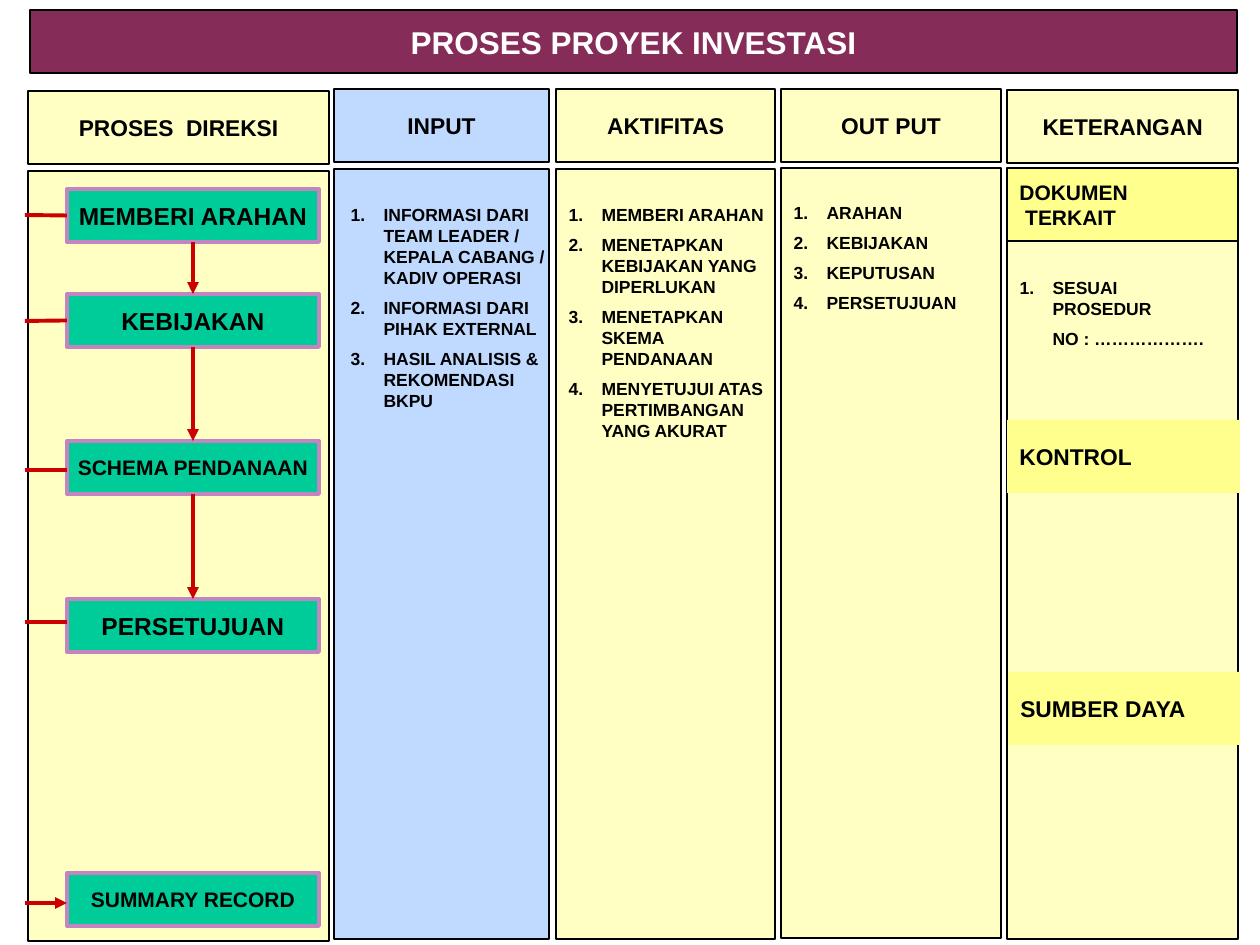
from dataclasses import dataclass
from lxml import etree
from pptx import Presentation, util as u
from pptx.dml.color import RGBColor
from pptx.enum import shapes, text
from pptx.oxml.ns import qn


@dataclass(frozen=True)
class Theme:
    font: str = "Arial"
    ink: str = "000000"
    white: str = "FFFFFF"
    title_fill: str = "862C59"
    cream: str = "FFFFC3"
    blue: str = "BFD9FF"
    yellow: str = "FFFF8D"
    step_fill: str = "00CC99"
    step_line: str = "C484BF"
    arrow: str = "CC0000"
    title_size: int = 18
    head_size: int = 13
    list_size: int = 10
    thin: float = 0.75
    thick: float = 2.25


THEME = Theme()

# Content (lengths in px, 126 px to the inch)
TITLE = "PROSES PROYEK INVESTASI"
# heading, left, width, heading top, body top, fill
COLUMNS = [
    ("PROSES  DIREKSI", 28, 301, 91, 171, THEME.cream),
    ("INPUT", 334, 215, 89, 169, THEME.blue),
    ("AKTIFITAS", 556, 219, 89, 169, THEME.cream),
    ("OUT PUT", 781, 220, 89, 168, THEME.cream),
    ("KETERANGAN", 1007, 231, 90, 169, THEME.cream),
]
# left, top, height, numbered items, unnumbered closing lines
LISTS = [
    (338, 198, 223, ["INFORMASI DARI TEAM LEADER / KEPALA CABANG / KADIV OPERASI",
                     "INFORMASI DARI PIHAK EXTERNAL",
                     "HASIL ANALISIS & REKOMENDASI BKPU"], []),
    (556, 198, 296, ["MEMBERI ARAHAN",
                     "MENETAPKAN KEBIJAKAN YANG DIPERLUKAN",
                     "MENETAPKAN SKEMA PENDANAAN",
                     "MENYETUJUI ATAS PERTIMBANGAN YANG AKURAT"], []),
    (781, 196, 129, ["ARAHAN", "KEBIJAKAN", "KEPUTUSAN", "PERSETUJUAN"], []),
    (1007, 271, 86, ["SESUAI PROSEDUR"], ["NO : ………………."]),
]
# label, top, text size, height of the incoming line
STEPS = [
    ("MEMBERI ARAHAN", 189, 14, 215),
    ("KEBIJAKAN", 294, 14, 321),
    ("SCHEMA PENDANAAN", 441, 12, 470),
    ("PERSETUJUAN", 599, 14, 622),
    ("SUMMARY RECORD", 873, 12, 903),
]
# lines, left, top, width, text size, outline
BANDS = [
    (["DOKUMEN", " TERKAIT"], 1007, 168, 231, 12, THEME.ink),
    (["KONTROL"], 1007, 420, 233, THEME.head_size, None),
    (["SUMBER DAYA"], 1008, 672, 232, THEME.head_size, None),
]
HEAD_HEIGHT, BODY_HEIGHT, STEP_HEIGHT = 73, 770, 53
STEP_LEFT, STEP_WIDTH, LINE_LEFT = 67, 252, 25
LIST_WIDTH, LIST_INDENT = 221, 33


def px(length):
    return u.Emu(round(length * 914400 / 126))


def place(shape, left, top, width, height):
    shape.left, shape.top, shape.width, shape.height = map(px, (left, top, width, height))


def paint(shape, fill, line=None, weight=THEME.thin):
    shape.fill.solid()
    shape.fill.fore_color.rgb = RGBColor.from_string(fill)
    if line:
        shape.line.color.rgb = RGBColor.from_string(line)
        shape.line.width = u.Pt(weight)
    else:
        shape.line.fill.background()


def write(shape, lines, size=THEME.head_size, color=THEME.ink, wrap=False,
          align=text.PP_ALIGN.CENTER, anchor=text.MSO_ANCHOR.MIDDLE, gap=0):
    frame = shape.text_frame
    frame.text = "\n".join(lines)
    frame.auto_size = text.MSO_AUTO_SIZE.NONE
    frame.word_wrap = wrap
    frame.vertical_anchor = anchor
    for number, paragraph in enumerate(frame.paragraphs):
        paragraph.alignment = align
        paragraph.space_before = u.Pt(gap if number else 0)
        font = paragraph.runs[0].font
        font.name, font.size, font.bold = THEME.font, u.Pt(size), True
        font.color.rgb = RGBColor.from_string(color)


def set_bullet(paragraph, numbered):
    properties = paragraph._p.get_or_add_pPr()
    properties.set("marL", str(px(LIST_INDENT)))
    properties.set("indent", str(px(-LIST_INDENT if numbered else 0)))
    if numbered:
        etree.SubElement(properties, qn("a:buAutoNum"), type="arabicPeriod")
    else:
        etree.SubElement(properties, qn("a:buNone"))


def add_box(slide, left, top, width, height, fill, line=None, weight=THEME.thin):
    box = slide.shapes.add_shape(shapes.MSO_SHAPE.RECTANGLE, 0, 0, 0, 0)
    place(box, left, top, width, height)
    box.shadow.inherit = False
    paint(box, fill, line, weight)
    return box


def add_line(slide, start, end, arrow=False):
    line = slide.shapes.add_connector(shapes.MSO_CONNECTOR.STRAIGHT, *map(px, start + end))
    line.line.color.rgb = RGBColor.from_string(THEME.arrow)
    line.line.width = u.Pt(THEME.thick)
    if arrow:
        etree.SubElement(line.line._get_or_add_ln(), qn("a:tailEnd"), type="triangle")
    etree.SubElement(line._element.spPr, qn("a:effectLst"))
    return line


def main():
    presentation = Presentation()
    presentation.slide_width, presentation.slide_height = px(1260), px(945)
    slide = presentation.slides.add_slide(presentation.slide_layouts.get_by_name("Comparison"))
    title, *bodies = slide.placeholders

    # Title bar
    place(title, 30, 10, 1207, 63)
    paint(title, THEME.title_fill, THEME.ink)
    write(title, [TITLE], size=THEME.title_size, color=THEME.white)

    # Columns with their headings
    for heading, left, width, head_top, body_top, fill in COLUMNS:
        add_box(slide, left, body_top, width, BODY_HEIGHT, fill, THEME.ink)
        write(add_box(slide, left, head_top, width, HEAD_HEIGHT, fill, THEME.ink), [heading])

    # Numbered lists, brought in front of the columns
    for body, (left, top, height, items, closing) in zip(bodies, LISTS):
        slide.shapes._spTree.append(body._element)
        place(body, left, top, LIST_WIDTH, height)
        write(body, items + closing, size=THEME.list_size, wrap=True, gap=5,
              align=text.PP_ALIGN.LEFT, anchor=text.MSO_ANCHOR.TOP)
        for number, paragraph in enumerate(body.text_frame.paragraphs):
            set_bullet(paragraph, number < len(items))

    # Yellow bands in the last column
    for lines, left, top, width, size, outline in BANDS:
        band = add_box(slide, left, top, width, HEAD_HEIGHT, THEME.yellow, outline)
        write(band, lines, size=size, align=text.PP_ALIGN.LEFT)

    # Process steps and the lines coming in from the left
    boxes = []
    for label, top, size, line_y in STEPS:
        box = add_box(slide, STEP_LEFT, top, STEP_WIDTH, STEP_HEIGHT,
                      THEME.step_fill, THEME.step_line, THEME.thick)
        write(box, [label], size=size)
        boxes.append(box)
        line = add_line(slide, (LINE_LEFT, line_y), (STEP_LEFT, line_y),
                        arrow=label == STEPS[-1][0])
        if abs(top + STEP_HEIGHT / 2 - line_y) < 1:
            line.end_connect(box, 1)

    # Arrows down through the first four steps
    for upper, lower in zip(boxes[:3], boxes[1:4]):
        arrow = add_line(slide, (0, 0), (0, 0), arrow=True)
        arrow.begin_connect(upper, 2)
        arrow.end_connect(lower, 0)

    presentation.save("out.pptx")


if __name__ == "__main__":
    main()
